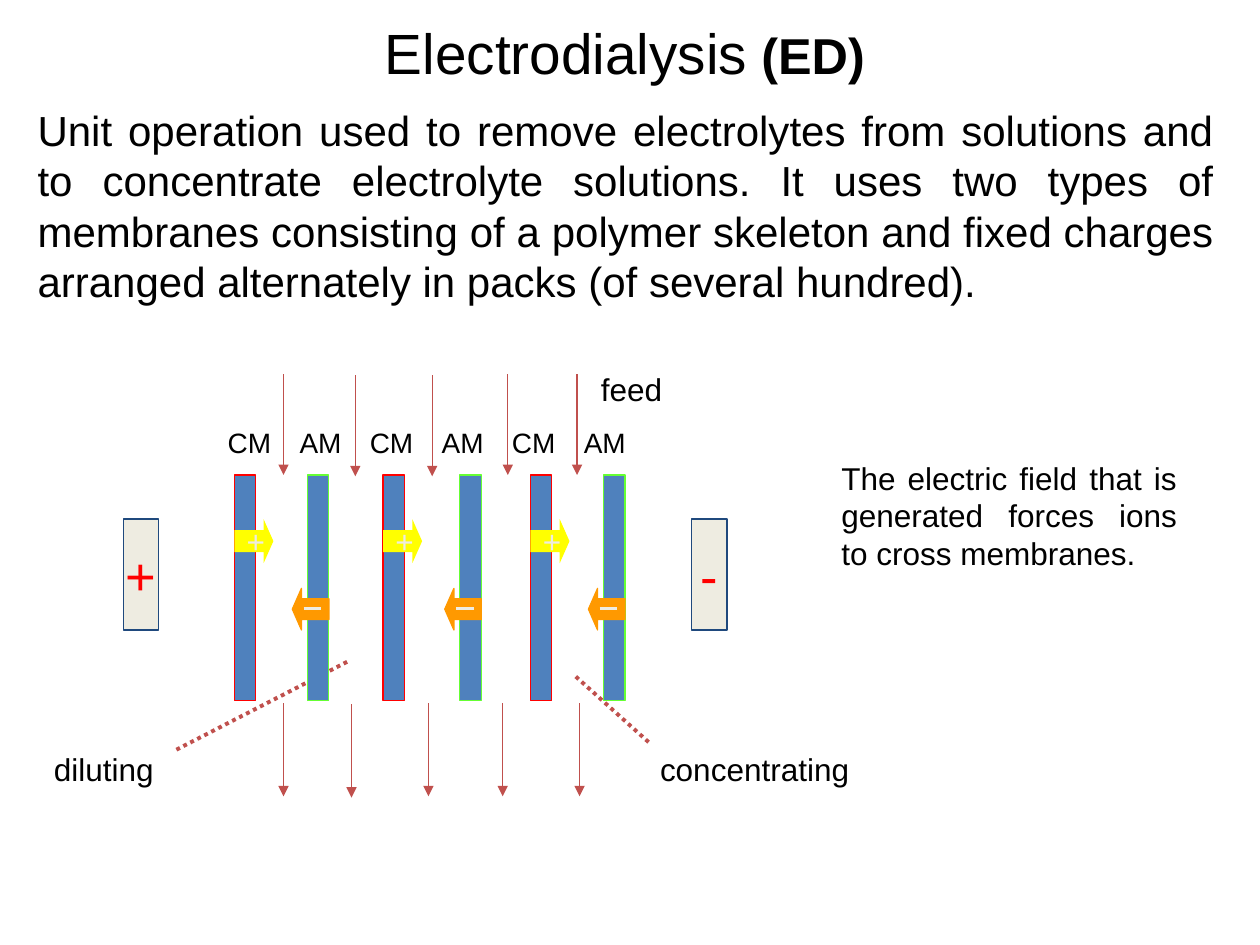
from lxml import etree
from pptx import Presentation
from pptx.dml.color import RGBColor
from pptx.enum.dml import MSO_LINE
from pptx.enum.shapes import MSO_CONNECTOR, MSO_SHAPE
from pptx.enum.text import MSO_ANCHOR, PP_ALIGN
from pptx.oxml.ns import qn
from pptx.util import Inches, Pt

LEFT, CENTER, JUSTIFY = PP_ALIGN.LEFT, PP_ALIGN.CENTER, PP_ALIGN.JUSTIFY
TOP, MIDDLE = MSO_ANCHOR.TOP, MSO_ANCHOR.MIDDLE
RECTANGLE = MSO_SHAPE.RECTANGLE
RIGHT_ARROW, LEFT_ARROW = MSO_SHAPE.RIGHT_ARROW, MSO_SHAPE.LEFT_ARROW
STRAIGHT, DOTTED = MSO_CONNECTOR.STRAIGHT, MSO_LINE.ROUND_DOT

COLORS = {
    "text": "000000", "flow": "C0504D", "membrane": "4F81BD",
    "cation": "FF0000", "anion": "66FF33", "positive": "FFFF00",
    "negative": "FF9900", "pale": "EEECE1", "electrode": "1F497D",
}


def color(name):
    return RGBColor.from_string(COLORS[name])


class SlideBuilder:
    """Holds the text style and the current slide."""

    def __init__(self, page, font="Arial"):
        self.page = page
        self.font = font

    def fill_text(self, frame, runs, ink="text", align=LEFT, anchor=TOP, wrap=True):
        frame.word_wrap = wrap
        frame.vertical_anchor = anchor
        para = frame.paragraphs[0]
        para.alignment = align
        for words, size, bold in runs:
            span = para.add_run()
            span.text = words
            span.font.name = self.font
            span.font.size = Pt(size)
            span.font.bold = bold
            span.font.color.rgb = color(ink)

    def text(self, left, top, width, height, runs, **style):
        box = self.page.shapes.add_textbox(
            Inches(left), Inches(top), Inches(width), Inches(height))
        self.fill_text(box.text_frame, runs, **style)

    def shape(self, kind, left, top, width, height, fill, line=None):
        shape = self.page.shapes.add_shape(
            kind, Inches(left), Inches(top), Inches(width), Inches(height))
        shape.shadow.inherit = False
        shape.fill.solid()
        shape.fill.fore_color.rgb = color(fill)
        if line:
            shape.line.color.rgb = color(line)
            shape.line.width = Pt(0.75)
        else:
            shape.line.fill.background()
        if kind != RECTANGLE:
            shape.adjustments[0] = 0.5
            shape.adjustments[1] = 0.25
        return shape

    def line(self, start, end, ink="flow", width=0.75, dash=None, arrow=False):
        line = self.page.shapes.add_connector(
            STRAIGHT, *(Inches(value) for value in (*start, *end)))
        line.line.color.rgb = color(ink)
        line.line.width = Pt(width)
        if dash:
            line.line.dash_style = dash
        properties = line.element.spPr
        if arrow:
            outline = properties.find(qn("a:ln"))
            etree.SubElement(outline, qn("a:tailEnd"), type="triangle")
        etree.SubElement(properties, qn("a:effectLst"))


def main():
    deck = Presentation()
    deck.slide_width, deck.slide_height = Inches(10), Inches(7.5)
    builder = SlideBuilder(deck.slides.add_slide(deck.slide_layouts[6]))

    # Dotted leaders and their labels
    builder.line((4.57, 5.37), (5.17, 5.91), width=2.25, dash=DOTTED)
    builder.line((1.4, 5.95), (2.76, 5.25), width=2.25, dash=DOTTED)
    for words, left, top, width in (
        ("concentrating", 5.14, 5.9, 2.46),
        ("diluting", 0.33, 5.9, 1.47),
        ("feed", 4.67, 2.89, 2.33),
    ):
        builder.text(left, top, width, 0.4, [(words, 18, False)])

    # Feed arrows above the stack, outlet arrows below
    for x, top in ((2.25, 2.97), (2.82, 2.98), (3.43, 2.98), (4.03, 2.97), (4.58, 2.97)):
        builder.line((x, top), (x, top + 0.8), arrow=True)
    for x, top in ((2.25, 5.58), (2.79, 5.59), (3.4, 5.58), (3.99, 5.58), (4.6, 5.58)):
        builder.line((x, top), (x, top + 0.74), arrow=True)

    # Alternating cation (CM) and anion (AM) membranes
    cation_lefts = (1.86, 3.04, 4.21)
    anion_lefts = (2.44, 3.65, 4.79)
    for lefts, edge in ((cation_lefts, "cation"), (anion_lefts, "anion")):
        for left in lefts:
            builder.shape(RECTANGLE, left, 3.77, 0.17, 1.79, "membrane", edge)

    # Ions crossing the membranes
    for left in cation_lefts:
        arrow = builder.shape(RIGHT_ARROW, left, 4.12, 0.31, 0.35, "positive")
        builder.fill_text(arrow.text_frame, [("+", 18, False)], ink="pale",
                          anchor=MIDDLE, wrap=False)
    for left in anion_lefts:
        builder.shape(LEFT_ARROW, left - 0.12, 4.67, 0.29, 0.33, "negative", "negative")
        builder.line((left - 0.03, 4.83), (left + 0.11, 4.83), ink="pale", width=1.5)

    # Electrodes
    for left, sign in ((0.98, "+"), (5.49, "-")):
        electrode = builder.shape(RECTANGLE, left, 4.12, 0.28, 0.88, "pale", "electrode")
        builder.fill_text(electrode.text_frame, [(sign, 30, False)], ink="cation",
                          align=CENTER, anchor=MIDDLE, wrap=False)

    # Membrane names, evenly spaced
    for index, name in enumerate(("CM", "AM") * 3):
        center = 1.98 + index * 2.82 / 5
        builder.text(center - 0.3, 3.33, 0.6, 0.37, [(name, 16, False)], align=CENTER)

    # Title and explanations
    builder.text(6.58, 3.59, 2.86, 1.01, [(
        "The electric field that is generated forces ions to cross membranes.",
        18, False)], align=JUSTIFY)
    builder.text(0.2, 0.78, 9.53, 1.72, [(
        "Unit operation used to remove electrolytes from solutions and to "
        "concentrate electrolyte solutions. It uses two types of membranes "
        "consisting of a polymer skeleton and fixed charges arranged "
        "alternately in packs (of several hundred).", 24, False)], align=JUSTIFY)
    builder.text(0.67, 0.1, 8.58, 0.63, [
        ("Electrodialysis", 32.4, False), (" (ED)", 28.8, True)],
        align=CENTER, anchor=MIDDLE)

    deck.save("out.pptx")


if __name__ == "__main__":
    main()
